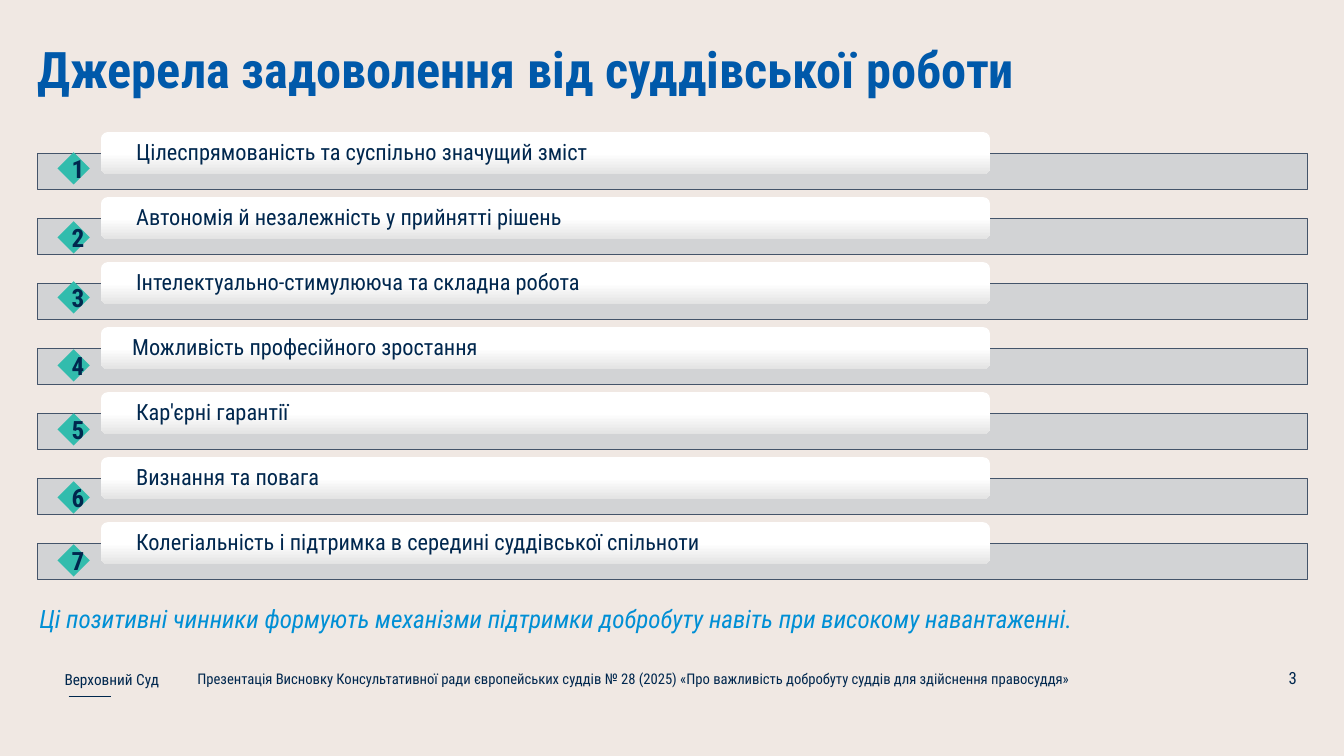
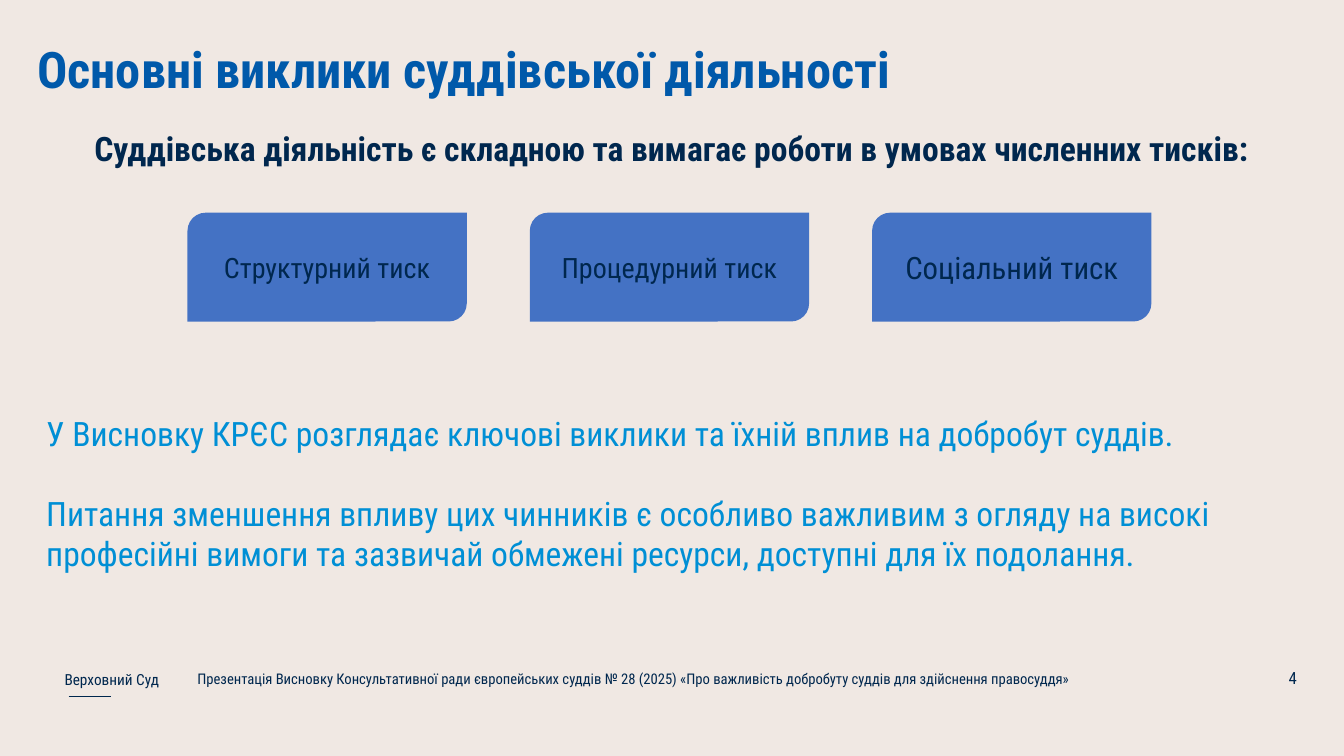
from dataclasses import dataclass

from lxml import etree
from pptx import Presentation
from pptx.dml.color import RGBColor
from pptx.enum.shapes import MSO_CONNECTOR, MSO_SHAPE
from pptx.enum.text import MSO_ANCHOR, PP_ALIGN
from pptx.oxml.ns import qn
from pptx.util import Inches, Pt

STRAIGHT = MSO_CONNECTOR.STRAIGHT
RECTANGLE, ROUNDED, DIAMOND, DIAGONAL = (
    MSO_SHAPE.RECTANGLE, MSO_SHAPE.ROUNDED_RECTANGLE,
    MSO_SHAPE.DIAMOND, MSO_SHAPE.ROUND_2_DIAG_RECTANGLE)
LEFT, CENTER, RIGHT = PP_ALIGN.LEFT, PP_ALIGN.CENTER, PP_ALIGN.RIGHT
TOP, MIDDLE = MSO_ANCHOR.TOP, MSO_ANCHOR.MIDDLE
NO_INSETS = (0, 0, 0, 0)
DEFAULT_INSETS = (0.1, 0.05, 0.1, 0.05)


@dataclass(frozen=True)
class Theme:
    font: str = "Roboto Condensed"
    background: str = "F0E8E3"
    ink: str = "00274E"
    title: str = "0059AA"
    accent: str = "008FD5"
    bar: str = "CFD1D4"
    bar_line: str = "44546A"
    card: str = "FFFFFF"
    card_edge: str = "E3E3E3"
    marker: str = "32BCAD"
    pressure: str = "4472C4"
    title_size: float = 36
    body_size: float = 24
    pressure_size: float = 20
    marker_size: float = 18
    row_size: float = 16
    page_size: float = 12
    court_size: float = 10.9
    footer_size: float = 10.5


@dataclass(frozen=True)
class Box:
    left: float
    top: float
    width: float
    height: float

    def inner(self, dx, dy, width, height):
        return Box(self.left + dx, self.top + dy, width, height)

    def lengths(self):
        return [Inches(v) for v in (self.left, self.top, self.width, self.height)]


THEME = Theme()
TITLE_BOX = Box(0.37, 0.44, 12.6, 0.54)
FOOTER_BOX = Box(0.55, 6.52, 12.41, 0.41)
COURT = "Верховний Суд"
FOOTER = ("Презентація Висновку Консультативної ради європейських суддів № 28 (2025) "
          "«Про важливість добробуту суддів для здійснення правосуддя»")

SOURCES_TITLE = "Джерела задоволення від суддівської роботи"
SOURCES = [
    ("Цілеспрямованість та суспільно значущий зміст", 0.33, -0.01),
    ("Автономія й незалежність у прийнятті рішень", 0.33, 0.03),
    ("Інтелектуально-стимулююча та складна робота", 0.33, -0.02),
    ("Можливість професійного зростання", 0.29, 0.01),
    ("Кар'єрні гарантії", 0.33, 0),
    ("Визнання та повага", 0.33, 0.03),
    ("Колегіальність і підтримка в середині суддівської спільноти", 0.33, 0.01),
]
SOURCES_SUMMARY = ("Ці позитивні чинники формують механізми підтримки добробуту "
                   "навіть при високому навантаженні.")

CHALLENGES_TITLE = "Основні виклики суддівської діяльності"
CHALLENGES_LEAD = ("Суддівська діяльність є складною та вимагає роботи "
                   "в умовах численних тисків:")
PRESSURES = [
    ("Структурний тиск", THEME.pressure_size),
    ("Процедурний тиск", THEME.pressure_size),
    ("Соціальний тиск", 22),
]
CONCLUSIONS = [
    "У Висновку КРЄС розглядає ключові виклики та їхній вплив на добробут суддів.",
    "Питання зменшення впливу цих чинників є особливо важливим з огляду на високі "
    "професійні вимоги та зазвичай обмежені ресурси, доступні для їх подолання.",
]


def rgb(color):
    return RGBColor.from_string(color)


def write(shape, paragraphs, size, color=THEME.ink, bold=False, italic=False,
          align=LEFT, anchor=TOP, insets=DEFAULT_INSETS, line_spacing=None, gap=0):
    frame = shape.text_frame
    frame.word_wrap = True
    frame.vertical_anchor = anchor
    (frame.margin_left, frame.margin_top,
     frame.margin_right, frame.margin_bottom) = [Inches(v) for v in insets]
    for index, text in enumerate(paragraphs):
        paragraph = frame.add_paragraph() if index else frame.paragraphs[0]
        paragraph.text = text
        paragraph.alignment = align
        if line_spacing:
            paragraph.line_spacing = line_spacing
        if index and gap:
            paragraph.space_before = Pt(gap)
        for run in paragraph.runs:
            run.font.name = THEME.font
            run.font.size = Pt(size)
            run.font.bold = bold
            run.font.italic = italic
            run.font.color.rgb = rgb(color)


def add_text(slide, box, paragraphs, size, **style):
    write(slide.shapes.add_textbox(*box.lengths()), paragraphs, size, **style)


def add_block(slide, kind, box, fill):
    block = slide.shapes.add_shape(kind, *box.lengths())
    block.shadow.inherit = False
    block.fill.solid()
    block.fill.fore_color.rgb = rgb(fill)
    block.line.fill.background()
    return block


def add_footer(slide, box, page):
    rule_y = Inches(box.top + 0.39)
    rule = slide.shapes.add_connector(
        STRAIGHT, Inches(box.left + 0.13), rule_y, Inches(box.left + 0.55), rule_y)
    rule.line.color.rgb = rgb(THEME.ink)
    rule.line.width = Pt(1.12)
    etree.SubElement(rule._element.spPr, qn("a:effectLst"))
    add_text(slide, box.inner(0, 0.01, 1.44, 0.4), [COURT], THEME.court_size,
             anchor=MIDDLE, insets=(0.09, 0.05, 0.09, 0.05), line_spacing=1.14)
    add_text(slide, box.inner(1.31, 0.08, 10.5, 0.25), [FOOTER], THEME.footer_size)
    add_text(slide, box.inner(box.width - 0.28, 0, 0.28, 0.4), [str(page)],
             THEME.page_size, align=RIGHT, anchor=MIDDLE)


def add_base_slide(deck, title, page):
    slide = deck.slides.add_slide(deck.slide_layouts[6])
    add_footer(slide, FOOTER_BOX, page)
    add_text(slide, TITLE_BOX, [title], THEME.title_size, color=THEME.title,
             bold=True, insets=NO_INSETS, line_spacing=Pt(39))
    return slide


def add_source_row(slide, box, number, label, indent, marker_shift):
    bar = add_block(slide, RECTANGLE, box.inner(0, 0.21, box.width, 0.36), THEME.bar)
    bar_color = bar.fill._xPr.find(qn("a:solidFill"))[0]
    etree.SubElement(bar_color, qn("a:alpha"), val="90000")
    bar.line.color.rgb = rgb(THEME.bar_line)
    bar.line.width = Pt(0.5)

    card = add_block(slide, ROUNDED, box.inner(0.63, 0, 8.82, 0.42), THEME.card)
    card.fill.gradient()
    card.fill.gradient_angle = 270
    stops = ((0.5, THEME.card), (1, THEME.card_edge))
    for stop, (position, color) in zip(card.fill.gradient_stops, stops):
        stop.position = position
        stop.color.rgb = rgb(color)
    write(card, [label], THEME.row_size, anchor=MIDDLE,
          insets=(indent, 0, indent, 0), line_spacing=0.9)

    marker = add_block(slide, DIAMOND,
                       box.inner(0.2, 0.21 + marker_shift, 0.32, 0.32), THEME.marker)
    write(marker, [str(number)], THEME.marker_size, bold=True,
          align=CENTER, anchor=MIDDLE)


def add_source_list(slide, box):
    row_height = 0.57
    pitch = (box.height - row_height) / (len(SOURCES) - 1)
    for index, source in enumerate(SOURCES):
        row = box.inner(0, index * pitch, box.width, row_height)
        add_source_row(slide, row, index + 1, *source)


def add_pressures(slide, box):
    width = 2.77
    pitch = (box.width - width) / (len(PRESSURES) - 1)
    for index, (label, size) in enumerate(PRESSURES):
        pressure = add_block(slide, DIAGONAL,
                             box.inner(index * pitch, 0, width, box.height),
                             THEME.pressure)
        write(pressure, [label], size, align=CENTER, anchor=MIDDLE)


def build_sources(deck, page):
    slide = add_base_slide(deck, SOURCES_TITLE, page)
    add_source_list(slide, Box(0.37, 1.31, 12.6, 4.44))
    add_text(slide, Box(0.39, 5.94, 12.46, 0.35), [SOURCES_SUMMARY],
             THEME.marker_size, color=THEME.accent, italic=True,
             insets=NO_INSETS, line_spacing=Pt(25))


def build_challenges(deck, page):
    slide = add_base_slide(deck, CHALLENGES_TITLE, page)
    add_text(slide, Box(0.36, 1.32, 12.6, 0.62), [CHALLENGES_LEAD],
             THEME.body_size, bold=True, align=CENTER,
             insets=NO_INSETS, line_spacing=Pt(25))
    add_pressures(slide, Box(1.86, 2.11, 9.56, 1.08))
    add_text(slide, Box(0.36, 4.05, 12.6, 1.72), CONCLUSIONS, THEME.body_size,
             color=THEME.accent, gap=28)


def main():
    deck = Presentation()
    deck.slide_width = Inches(13.33)
    deck.slide_height = Inches(7.5)
    backdrop = deck.slide_master.background.fill
    backdrop.solid()
    backdrop.fore_color.rgb = rgb(THEME.background)
    for page, build in enumerate((build_sources, build_challenges), start=3):
        build(deck, page)
    deck.save("out.pptx")


if __name__ == "__main__":
    main()
